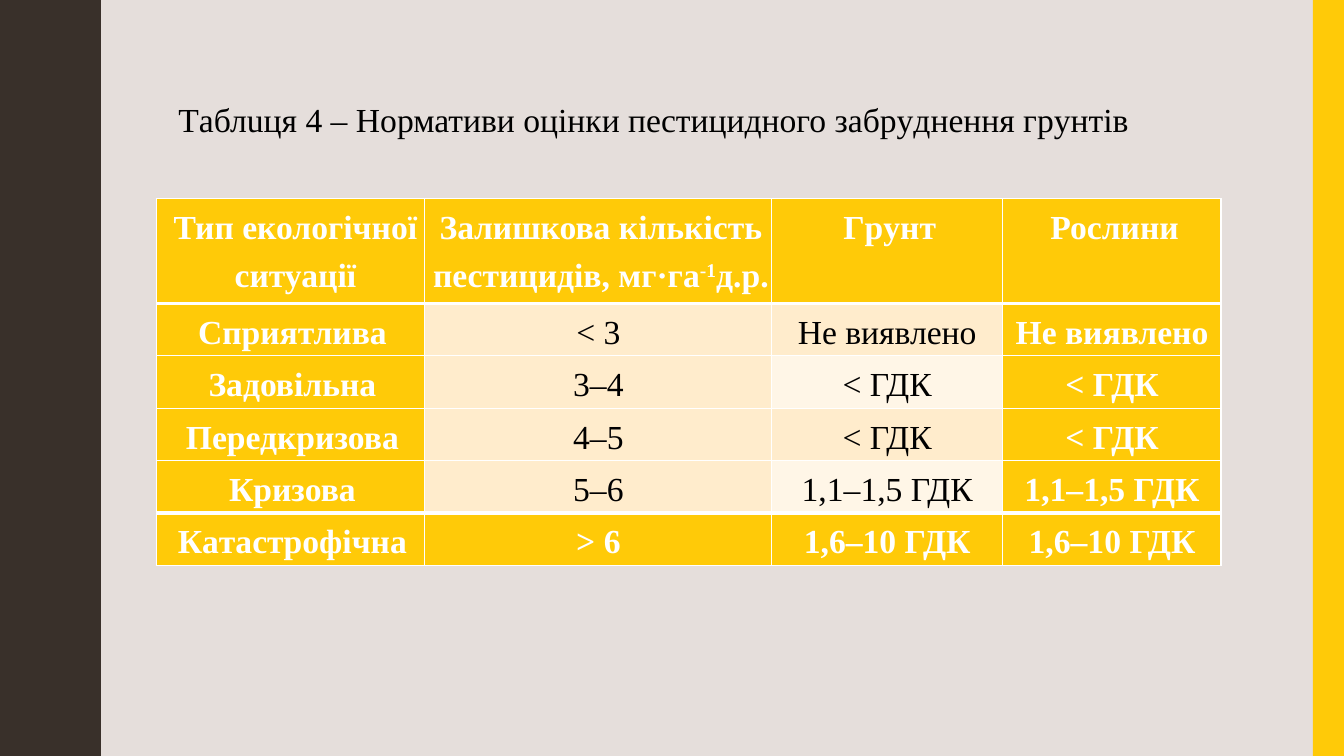
"""Builds a slide with a table of soil pesticide pollution norms."""
from lxml import etree
from pptx import Presentation
from pptx.dml.color import RGBColor
from pptx.enum.shapes import MSO_SHAPE
from pptx.enum.text import MSO_ANCHOR, PP_ALIGN
from pptx.oxml.ns import qn
from pptx.util import Inches, Pt

TITLE = "Тaблuця 4 – Нормативи оцiнки пеcтицидного забрyднення грyнтiв"
ROWS = [
    (["Тип екологічної ситуації"],
     ["Зaлишковa кількість пестицидів, мг·гa", "-1", "д.p."], ["Гpунт"], ["Рослини"]),
    (["Cпpиятливa"], ["< 3"], ["Не виявлено"], ["Не виявлено"]),
    (["Зaдовільнa"], ["3–4"], ["< ГДК"], ["< ГДК"]),
    (["Пеpедкpизовa"], ["4–5"], ["< ГДК"], ["< ГДК"]),
    (["Кpизовa"], ["5–6"], ["1,1–1,5 ГДК"], ["1,1–1,5 ГДК"]),
    (["Кaтaстpофічнa"], ["> 6"], ["1,6–10 ГДК"], ["1,6–10 ГДК"]),
]
COLS = [2.66, 3.44, 2.29, 2.17]
ROW = 0.52
HEAD_PAD = [0.1, 0.06, 0.06, 0.06]
BODY_PAD = [0.04, 0.01, 0.01, 0.01]
BEND = [(0, 0.78), (0.07, 0.78), (0.14, 0.79), (0.2, 0.8), (0.25, 0.81),
        (0.29, 0.83), (0.33, 0.85), (0.38, 0.87), (0.42, 0.89), (0.46, 0.91),
        (0.5, 0.93), (0.55, 0.95), (0.61, 0.96), (0.68, 0.97), (0.75, 0.97)]
WAVE = 1.5
WIDE, HIGH = 13.33, 7.5
BAR = 0.31
FONT = "Times New Roman"
SIZE = Pt(24)

SAND = RGBColor(0xE5, 0xDE, 0xDB)
BROWN = RGBColor(0x39, 0x30, 0x2A)
GOLD = RGBColor(0xFF, 0xCA, 0x08)
PEACH = RGBColor(0xFF, 0xEC, 0xCC)
CREAM = RGBColor(0xFF, 0xF6, 0xE7)
WHITE = RGBColor(0xFF, 0xFF, 0xFF)
BLACK = RGBColor(0, 0, 0)

RECT = MSO_SHAPE.RECTANGLE
CENTER, LEFT = PP_ALIGN.CENTER, PP_ALIGN.LEFT
MIDDLE = MSO_ANCHOR.MIDDLE


def paint(shape, color):
    shape.shadow.inherit = False
    shape.fill.solid()
    shape.fill.fore_color.rgb = color
    shape.line.fill.background()


def style(font, color, bold):
    font.name, font.size, font.bold = FONT, SIZE, bold
    font.color.rgb = color


def add_wave(slide):
    period = BEND + [(WAVE - y, x) for y, x in BEND[-2:0:-1]]
    edge = [(x, n * WAVE + y) for n in range(int(HIGH / WAVE)) for y, x in period]
    edge += [(BEND[0][1], HIGH), (0, HIGH)]
    pen = slide.shapes.build_freeform(0, 0, scale=Inches(1))
    pen.add_line_segments(edge, close=True)
    paint(pen.convert_to_shape(), BROWN)


def add_title(slide):
    title = slide.shapes.title
    title.left, title.top = Inches(1.67), Inches(0.91)
    title.width, title.height = Inches(10.32), Inches(0.54)
    frame = title.text_frame
    frame.text = TITLE
    frame.word_wrap = True
    frame.vertical_anchor = MIDDLE
    par = frame.paragraphs[0]
    par.alignment = LEFT
    style(par.runs[0].font, BLACK, False)


def add_edges(cell, top, base):
    props = cell._tc.get_or_add_tcPr()
    for n, (side, width) in enumerate(zip("LRTB", (1, 1, top, base))):
        line = etree.Element(qn("a:ln" + side), w=str(Pt(width)))
        fill = etree.SubElement(line, qn("a:solidFill"))
        etree.SubElement(fill, qn("a:srgbClr"), val=str(WHITE))
        props.insert(n, line)


def fill_cell(cell, parts, row, col):
    last = len(ROWS) - 1
    strong = row in (0, last) or col in (0, len(COLS) - 1)
    pale = CREAM if col == 2 and row % 2 == 0 else PEACH
    cell.fill.solid()
    cell.fill.fore_color.rgb = GOLD if strong else pale
    cell.margin_left = cell.margin_right = cell.margin_top = cell.margin_bottom = 0
    add_edges(cell, 3 if row in (1, last) else 1, 3 if row in (0, last - 1) else 1)
    par = cell.text_frame.paragraphs[0]
    par.alignment = CENTER
    par.line_spacing = 1.3
    par.space_before = Pt(0.5)
    pad = BODY_PAD if row else HEAD_PAD
    par._p.get_or_add_pPr().set("marL", str(Inches(pad[col])))
    for n, part in enumerate(parts):
        run = par.add_run()
        run.text = part
        style(run.font, WHITE if strong else BLACK, strong)
        if n == 1:
            run.font._element.set("baseline", "30000")


def add_norms(slide):
    lines = [2] + [1] * (len(ROWS) - 1)
    frame = slide.shapes.add_table(len(ROWS), len(COLS), Inches(1.55), Inches(1.97),
                                   Inches(sum(COLS)), Inches(ROW * sum(lines)))
    table = frame.table
    for col, width in zip(table.columns, COLS):
        col.width = Inches(width)
    for row, count in zip(table.rows, lines):
        row.height = Inches(ROW * count)
    for r, cells in enumerate(ROWS):
        for c, parts in enumerate(cells):
            fill_cell(table.cell(r, c), parts, r, c)


def main():
    deck = Presentation()
    deck.slide_width, deck.slide_height = Inches(WIDE), Inches(HIGH)
    slide = deck.slides.add_slide(deck.slide_layouts[5])
    slide.background.fill.solid()
    slide.background.fill.fore_color.rgb = SAND
    add_wave(slide)
    bar = slide.shapes.add_shape(RECT, Inches(WIDE - BAR), 0, Inches(BAR), Inches(HIGH))
    paint(bar, GOLD)
    add_norms(slide)
    add_title(slide)
    deck.save("out.pptx")


if __name__ == "__main__":
    main()
